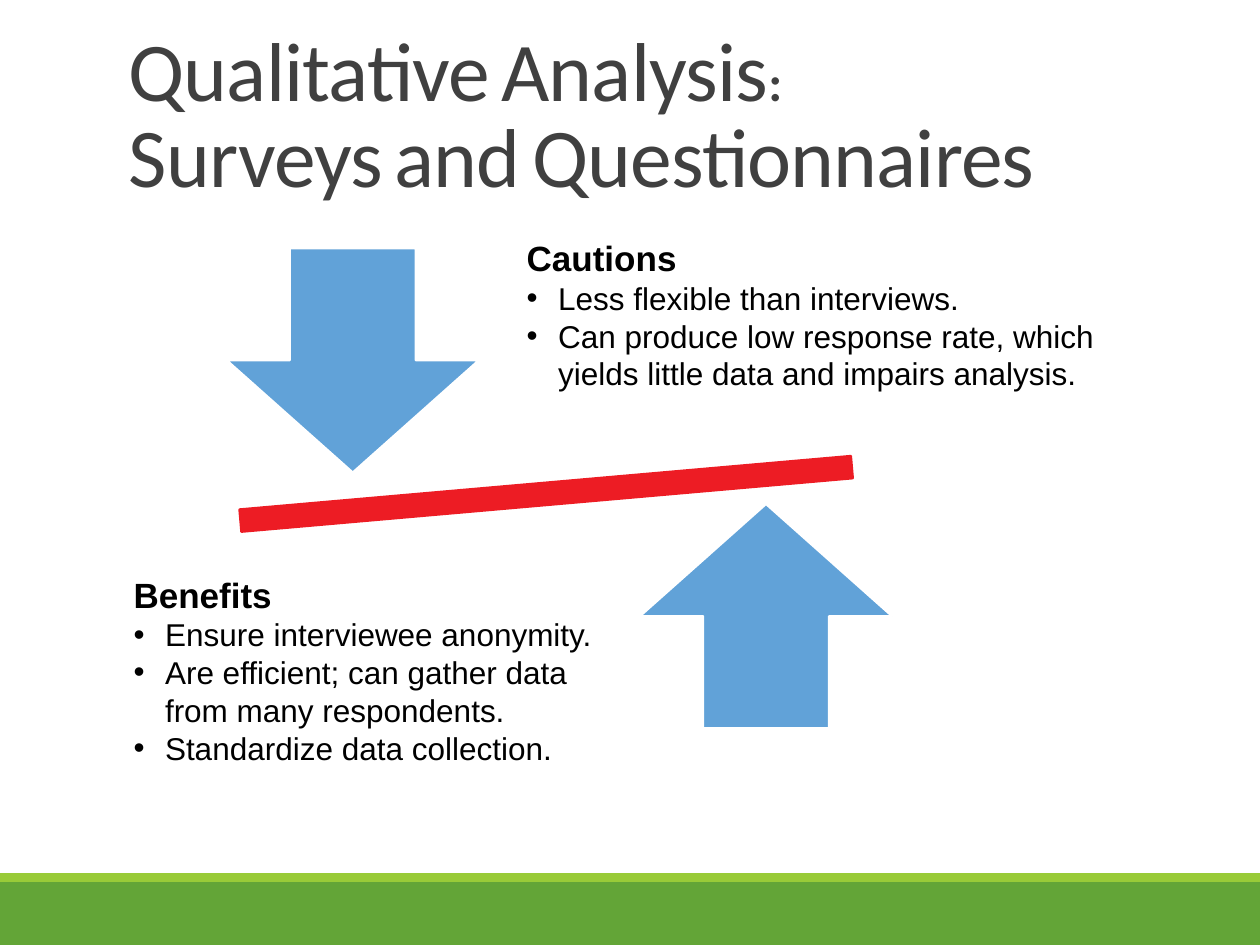
from pptx import Presentation
from pptx.dml.color import RGBColor
from pptx.enum.shapes import MSO_SHAPE
from pptx.enum.text import MSO_ANCHOR, MSO_AUTO_SIZE, PP_ALIGN
from pptx.oxml.ns import qn
from pptx.util import Inches, Pt
from lxml.etree import SubElement

THEME = {
    "title_font": "Calibri", "body_font": "Arial",
    "title_size": 47.7, "gap_size": 28.8, "heading_size": 20, "item_size": 18,
    "title": "404040", "text": "000000", "arrow": "61A2D8", "white": "FFFFFF",
    "beam": "ED1C24", "band": "63A537", "stripe": "99CB38",
}
TITLE_LINES = [
    [("Qualitative", "title_size"), (" ", "gap_size"),
     ("Analysis", "title_size"), (":", "gap_size")],
    [("Surveys", "title_size"), (" ", "gap_size"), ("and", "title_size"),
     (" ", "gap_size"), ("Questionnaires", "title_size")],
]
TITLE_BOX = (0.92, 0.67, 9.08, 1)
LISTS = [
    ("Benefits", (0.96, 4.5, 3.96, 1.65), [
        "Ensure interviewee anonymity.",
        "Are efficient; can gather data from many respondents.",
        "Standardize data collection."]),
    ("Cautions", (4.08, 1.83, 5.25, 1.65), [
        "Less flexible than interviews.",
        "Can produce low response rate, which yields little data and impairs analysis."]),
]
SHAPES = [
    (MSO_SHAPE.RECTANGLE, (0, 7, 10, 0.5), "band", None, 0),
    (MSO_SHAPE.RECTANGLE, (0, 6.93, 10, 0.07), "stripe", None, 0),
    (MSO_SHAPE.MATH_MINUS, (1.02, 3.54, 6.63, 0.76), "beam", "beam", 355),
    (MSO_SHAPE.DOWN_ARROW, (1.8, 1.97, 2, 1.78), "arrow", "white", 0),
    (MSO_SHAPE.UP_ARROW, (5.08, 4, 2, 1.78), "arrow", "white", 0),
]


def color(name):
    return RGBColor.from_string(THEME[name])


def place(shape, box):
    shape.left, shape.top, shape.width, shape.height = map(Inches, box)


def style(font, face, size, ink, bold):
    font.name = THEME[face]
    font.size = Pt(THEME[size])
    font.color.rgb = color(ink)
    font.bold = bold


def add_shape(slide, kind, box, fill, line, rotation):
    shape = slide.shapes.add_shape(kind, *map(Inches, box))
    shape.shadow.inherit = False
    shape.rotation = rotation
    shape.fill.solid()
    shape.fill.fore_color.rgb = color(fill)
    if line:
        shape.line.color.rgb = color(line)
        shape.line.width = Pt(1.25)
    else:
        shape.line.fill.background()


def fill_title(title):
    place(title, TITLE_BOX)
    frame = title.text_frame
    frame.word_wrap = True
    frame.auto_size = MSO_AUTO_SIZE.NONE
    frame.vertical_anchor = MSO_ANCHOR.BOTTOM
    paragraph = frame.paragraphs[0]
    paragraph.alignment = PP_ALIGN.LEFT
    paragraph.line_spacing = 0.85
    for index, line in enumerate(TITLE_LINES):
        if index:
            paragraph.add_line_break()
        for text, size in line:
            run = paragraph.add_run()
            run.text = text
            style(run.font, "title_font", size, "title", size == "gap_size")
            run.font._element.set("spc", "-50")


def fill_list(placeholder, heading, box, items):
    place(placeholder, box)
    frame = placeholder.text_frame
    frame.text = "\n".join([heading, *items])
    frame.word_wrap = True
    frame.auto_size = MSO_AUTO_SIZE.SHAPE_TO_FIT_TEXT
    frame.vertical_anchor = MSO_ANCHOR.TOP
    for index, paragraph in enumerate(frame.paragraphs):
        paragraph.space_before = Pt(0)
        properties = paragraph._p.get_or_add_pPr()
        properties.set("marL", str(Inches(0.25)))
        properties.set("indent", str(-Inches(0.25)))
        if index:
            SubElement(properties, qn("a:buFont")).set("typeface", THEME["body_font"])
            SubElement(properties, qn("a:buChar")).set("char", "•")
        else:
            SubElement(properties, qn("a:buNone"))
        size = "item_size" if index else "heading_size"
        style(paragraph.runs[0].font, "body_font", size, "text", index == 0)


def main():
    presentation = Presentation()
    presentation.slide_width = Inches(10)
    presentation.slide_height = Inches(7.5)
    slide = presentation.slides.add_slide(presentation.slide_layouts[3])
    for entry in SHAPES:
        add_shape(slide, *entry)
    fill_title(slide.shapes.title)
    for number, entry in enumerate(LISTS, 1):
        fill_list(slide.placeholders[number], *entry)
    presentation.save("out.pptx")


if __name__ == "__main__":
    main()
